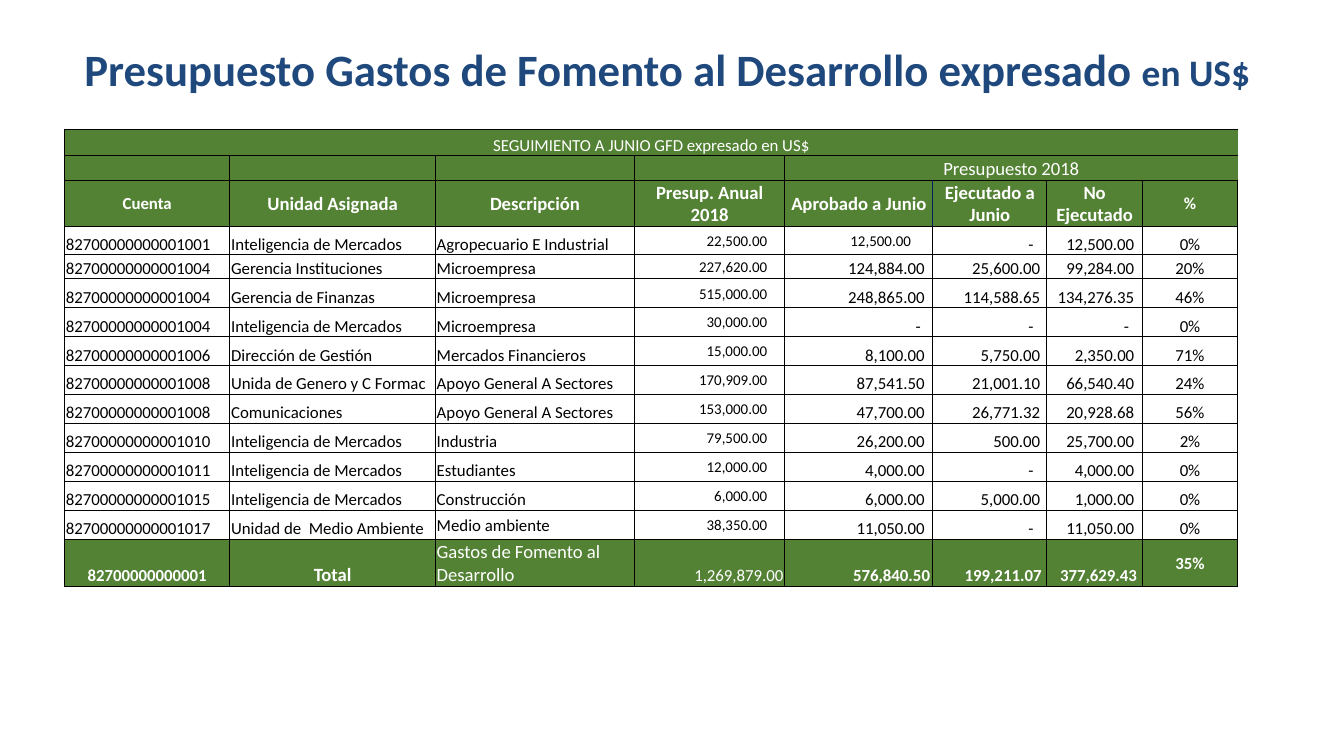
from lxml import etree
from pptx import Presentation
from pptx import util as u
from pptx.dml.color import RGBColor
from pptx.enum import text
from pptx.oxml import ns

# Content
TITLE = ("Presupuesto Gastos de Fomento al Desarrollo expresado ", "en US$")
BANNER = "SEGUIMIENTO A JUNIO GFD expresado en US$"
GROUP = "Presupuesto 2018"
HEADERS = ["Cuenta", "Unidad Asignada", "Descripción", "Presup. Anual 2018",
           "Aprobado a Junio", "Ejecutado a Junio", "No Ejecutado", "%"]
ACCOUNTS = [
    ("82700000000001001", "Inteligencia de Mercados", "Agropecuario E Industrial",
     "22,500.00", "12,500.00", "-", "12,500.00", "0%"),
    ("82700000000001004", "Gerencia Instituciones", "Microempresa",
     "227,620.00", "124,884.00", "25,600.00", "99,284.00", "20%"),
    ("82700000000001004", "Gerencia de Finanzas", "Microempresa",
     "515,000.00", "248,865.00", "114,588.65", "134,276.35", "46%"),
    ("82700000000001004", "Inteligencia de Mercados", "Microempresa",
     "30,000.00", "-", "-", "-", "0%"),
    ("82700000000001006", "Dirección de Gestión", "Mercados Financieros",
     "15,000.00", "8,100.00", "5,750.00", "2,350.00", "71%"),
    ("82700000000001008", "Unida de Genero y C Formac", "Apoyo General A Sectores",
     "170,909.00", "87,541.50", "21,001.10", "66,540.40", "24%"),
    ("82700000000001008", "Comunicaciones", "Apoyo General A Sectores",
     "153,000.00", "47,700.00", "26,771.32", "20,928.68", "56%"),
    ("82700000000001010", "Inteligencia de Mercados", "Industria",
     "79,500.00", "26,200.00", "500.00", "25,700.00", "2%"),
    ("82700000000001011", "Inteligencia de Mercados", "Estudiantes",
     "12,000.00", "4,000.00", "-", "4,000.00", "0%"),
    ("82700000000001015", "Inteligencia de Mercados", "Construcción",
     "6,000.00", "6,000.00", "5,000.00", "1,000.00", "0%"),
    ("82700000000001017", "Unidad de  Medio Ambiente", "Medio ambiente",
     "38,350.00", "11,050.00", "-", "11,050.00", "0%"),
]
TOTALS = ["82700000000001", "Total", "Gastos de Fomento al Desarrollo", "1,269,879.00",
          "576,840.50", "199,211.07", "377,629.43", "35%"]

THEME = dict(font="Calibri", title="1F497D", green="548235", white="FFFFFF", ink="000000",
             navy="002060", title_size=24, unit_size=20, head=10, body=9, small=8)

# Layout
WIDTH = u.Inches(10)
HEIGHT = WIDTH * 9 // 16
COLUMNS = [1.23, 1.53, 1.48, 1.12, 1.1, 0.85, 0.71, 0.71]
ACCOUNTS_BOTTOM, TOTAL_HEIGHT = 3.05, 0.35
ROWS = [0.2, 0.18, 0.34, 0.21, 0.18]
ROWS += [(ACCOUNTS_BOTTOM - sum(ROWS)) / 9] * 9 + [TOTAL_HEIGHT]
FIRST, LAST = 3, len(ROWS) - 1
PERCENT = len(COLUMNS) - 1
AMOUNT_GAP = {3: 0.13, 4: 0.06, 5: 0.05, 6: 0.06}
DASH_GAP = {4: 0.09, 5: 0.1, 6: 0.1}
TOTAL_GAP = {3: 0.01, 4: 0.02, 5: 0.04, 6: 0.04}

ALIGN, ANCHOR = text.PP_ALIGN, text.MSO_ANCHOR


def color(name):
    return RGBColor.from_string(THEME[name])


def style(font, size, ink, bold=False):
    font.name, font.size, font.bold = THEME["font"], u.Pt(size), bold
    font.color.rgb = color(ink)


def draw_borders(cell, edges):
    properties = cell._tc.get_or_add_tcPr()
    for side in "LRTB":
        line = etree.SubElement(properties, ns.qn(f"a:ln{side}"), w=str(u.Pt(0.5)))
        if side in edges:
            fill = etree.SubElement(line, ns.qn("a:solidFill"))
            etree.SubElement(fill, ns.qn("a:srgbClr"), val=THEME[edges[side]])
        else:
            etree.SubElement(line, ns.qn("a:noFill"))


def fill_cell(cell, words, size, ink, bold=False, align=ALIGN.LEFT, anchor=ANCHOR.BOTTOM,
              gap=0.01, edges=None, green=False):
    draw_borders(cell, edges or dict.fromkeys("LRTB", "ink"))
    if green:
        cell.fill.solid()
        cell.fill.fore_color.rgb = color("green")
    else:
        cell.fill.background()
    cell.margin_left = cell.margin_top = u.Inches(0.01)
    cell.margin_right, cell.margin_bottom = u.Inches(gap), 0
    cell.vertical_anchor = anchor
    para = cell.text_frame.paragraphs[0]
    para.alignment = align
    style(para.font, size, ink, bold)
    if words:
        para.add_run().text = words
    else:
        etree.SubElement(para._p, ns.qn("a:endParaRPr"), sz=str(size * 100))


deck = Presentation()
deck.slide_width, deck.slide_height = WIDTH, HEIGHT
page = deck.slides.add_slide(deck.slide_layouts[6])

# Title
box = page.shapes.add_textbox(*map(u.Inches, (0.5, 0.23, 8.9, 0.56)))
box.text_frame.word_wrap = True
box.text_frame.vertical_anchor = ANCHOR.MIDDLE
para = box.text_frame.paragraphs[0]
para.alignment = ALIGN.RIGHT
for words, size in zip(TITLE, (THEME["title_size"], THEME["unit_size"])):
    span = para.add_run()
    span.text = words
    style(span.font, size, "title", True)

# Table grid
frame = page.shapes.add_table(len(ROWS), len(COLUMNS), u.Inches(0.48), u.Inches(0.96),
                              u.Inches(sum(COLUMNS)), u.Inches(sum(ROWS)))
table = frame.table
table.first_row = table.horz_banding = False
for column, width in zip(table.columns, COLUMNS):
    column.width = u.Inches(width)
for row, height in zip(table.rows, ROWS):
    row.height = u.Inches(height)

# Banner and group rows, open on the right
for r, words, start in ((0, BANNER, 0), (1, GROUP, 4)):
    for c in range(len(COLUMNS)):
        sides = "LRTB" if c < start else "LTB" if c == start else "TB"
        fill_cell(table.cell(r, c), words if c == start else "",
                  THEME["head"] if r else THEME["body"], "white", align=ALIGN.CENTER,
                  edges=dict.fromkeys(sides, "ink"), green=True)
    table.cell(r, start).merge(table.cell(r, PERCENT))

# Column headings
for c, words in enumerate(HEADERS):
    edges = dict.fromkeys("LRTB", "ink")
    if c in (4, 5):
        edges["R" if c == 4 else "L"] = "navy"
    size = THEME["body"] if c in (0, PERCENT) else THEME["head"]
    fill_cell(table.cell(2, c), words, size, "white", True, ALIGN.CENTER, ANCHOR.MIDDLE,
              edges=edges, green=True)

# Account rows
for r, account in enumerate(ACCOUNTS, FIRST):
    for c, words in enumerate(account):
        gap = (DASH_GAP if words == "-" else AMOUNT_GAP).get(c, 0.01)
        align = ALIGN.RIGHT if c in AMOUNT_GAP else ALIGN.CENTER if c == PERCENT else ALIGN.LEFT
        small = c == 3 or (r, c) == (FIRST, 4)
        if (r, c) == (FIRST, 4):
            gap = 0.16
        middle = small or words == "Medio ambiente"
        fill_cell(table.cell(r, c), words, THEME["small" if small else "body"], "ink",
                  align=align, anchor=ANCHOR.MIDDLE if middle else ANCHOR.BOTTOM, gap=gap)

# Total row
for c, words in enumerate(TOTALS):
    align = ALIGN.RIGHT if c in TOTAL_GAP else ALIGN.LEFT if c == 2 else ALIGN.CENTER
    fill_cell(table.cell(LAST, c), words, THEME["head" if c in (1, 2) else "body"], "white",
              c not in (2, 3), align, ANCHOR.MIDDLE if c == PERCENT else ANCHOR.BOTTOM,
              TOTAL_GAP.get(c, 0.01), green=True)

deck.save("out.pptx")
